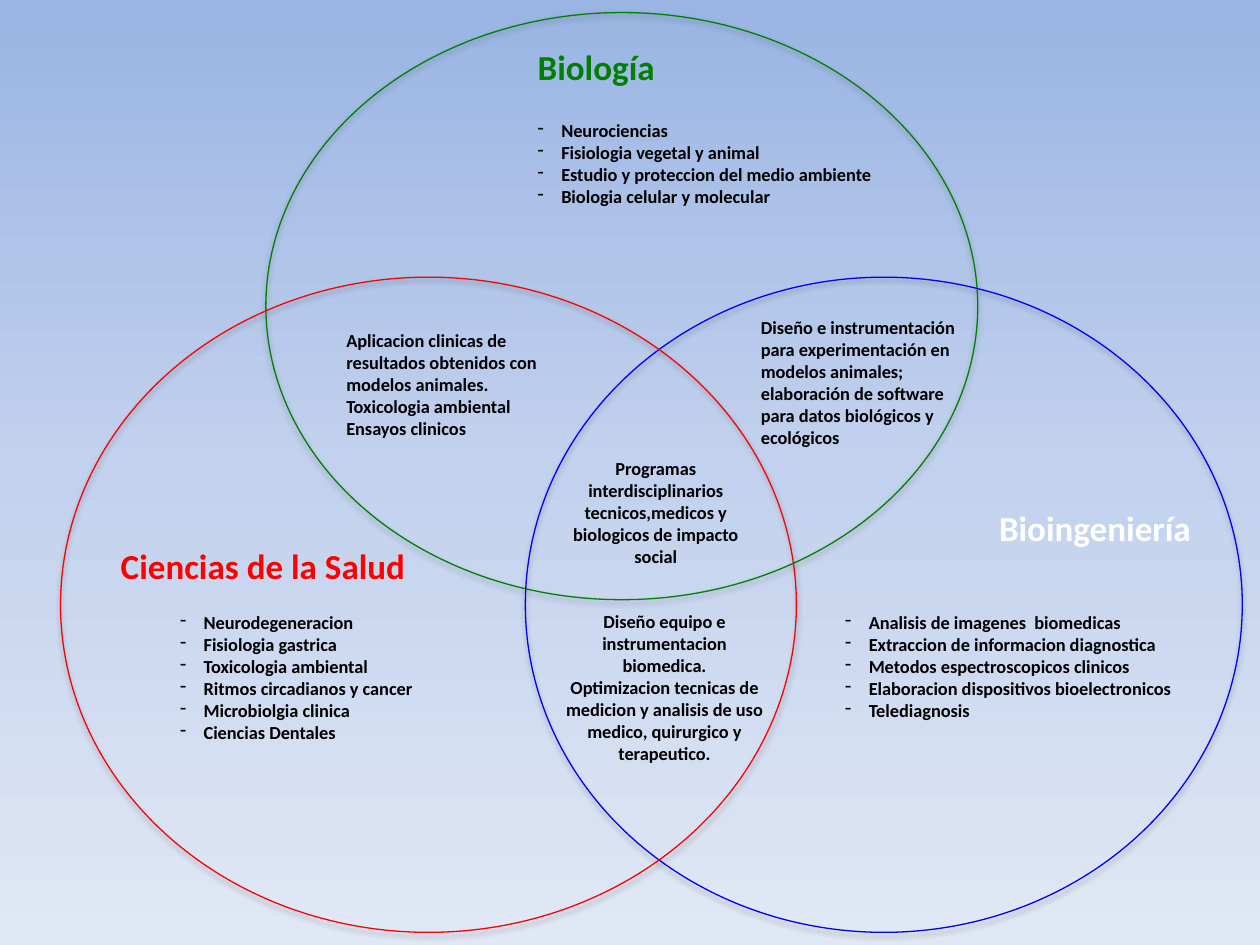
from copy import deepcopy

from lxml.etree import SubElement
from pptx import Presentation
from pptx.dml.color import RGBColor
from pptx.enum.shapes import MSO_SHAPE
from pptx.enum.text import MSO_AUTO_SIZE, PP_ALIGN
from pptx.oxml.ns import qn
from pptx.util import Pt

GREEN = RGBColor(0x00, 0x80, 0x00)
BLUE = RGBColor(0x00, 0x00, 0xFF)
RED = RGBColor(0xFF, 0x00, 0x00)
WHITE = RGBColor(0xFF, 0xFF, 0xFF)
BLACK = RGBColor(0x00, 0x00, 0x00)
SKY = [RGBColor(0x9A, 0xB5, 0xE4), RGBColor(0xC2, 0xD1, 0xED), RGBColor(0xE1, 0xE8, 0xF5)]

BODY_FONT = {"name": "Calibri", "size": Pt(10.5), "bold": True}
TITLE_FONT = {**BODY_FONT, "size": Pt(20)}
BULLET_INDENT = Pt(13.5)

CIRCLES = [
    ((151.9, 7.2, 406.8, 335.5), GREEN),
    ((300.2, 158.4, 409.7, 374.4), BLUE),
    ((34.6, 158.4, 420.5, 374.4), RED),
]

TITLES = [
    ((300.2, 22.3, 82.1, 31.7), "Biología", GREEN),
    ((563.8, 285.8, 125.3, 31.7), "Bioingeniería", WHITE),
    ((61.9, 307.4, 178.6, 31.7), "Ciencias de la Salud", RED),
]

OVERLAPS = [
    ((427.7, 177.1, 130.3, 83.5), PP_ALIGN.LEFT, [
        "Diseño e instrumentación para experimentación en modelos animales; "
        "elaboración de software para datos biológicos y ecológicos",
    ]),
    ((190.8, 184.3, 130.3, 70.6), PP_ALIGN.LEFT, [
        "Aplicacion clinicas de resultados obtenidos con modelos animales.",
        "Toxicologia ambiental",
        "Ensayos clinicos",
    ]),
    ((314.6, 344.9, 130.3, 96.5), PP_ALIGN.CENTER, [
        "Diseño equipo e instrumentacion biomedica.",
        "Optimizacion tecnicas de medicion y analisis de uso medico, "
        "quirurgico y terapeutico.",
    ]),
    ((309.6, 257.8, 130.3, 70.6), PP_ALIGN.CENTER, [
        "Programas interdisciplinarios tecnicos,medicos y biologicos de impacto social",
    ]),
]

TOPICS = [
    ((300.2, 64.8, 225.4, 83.5), [
        "Neurociencias",
        "Fisiologia vegetal y animal",
        "Estudio y proteccion del medio ambiente",
        "Biologia celular y molecular",
    ]),
    ((95.8, 345.6, 225.4, 108.7), [
        "Neurodegeneracion",
        "Fisiologia gastrica",
        "Toxicologia ambiental",
        "Ritmos circadianos y cancer",
        "Microbiolgia clinica",
        "Ciencias Dentales",
    ]),
    ((475.9, 345.6, 225.4, 70.6), [
        "Analisis de imagenes  biomedicas",
        "Extraccion de informacion diagnostica",
        "Metodos espectroscopicos clinicos",
        "Elaboracion dispositivos bioelectronicos",
        "Telediagnosis",
    ]),
]


def set_background(page):
    fill = page.background.fill
    fill.gradient()
    fill.gradient_angle = 270
    first = page.element.find(".//" + qn("a:gs"))
    first.addnext(deepcopy(first))
    for stop, color, position in zip(fill.gradient_stops, SKY, (0, 0.5, 1)):
        stop.color.rgb = color
        stop.position = position


def add_shadow(shape):
    shape.shadow.inherit = False
    effects = shape.element.spPr.find(qn("a:effectLst"))
    shadow = SubElement(effects, qn("a:outerShdw"), blurRad=str(Pt(3.1)),
                        dist=str(Pt(1.8)), dir="5400000", rotWithShape="0")
    color = SubElement(shadow, qn("a:srgbClr"), val=str(BLACK))
    SubElement(color, qn("a:alpha"), val="35000")


def add_circle(group, place, color):
    circle = group.shapes.add_shape(MSO_SHAPE.OVAL, *map(Pt, place))
    circle.fill.background()
    circle.line.color.rgb = color
    circle.line.width = Pt(0.75)
    add_shadow(circle)


def add_bullet(para):
    properties = para._p.get_or_add_pPr()
    properties.set("marL", str(BULLET_INDENT))
    properties.set("indent", str(-BULLET_INDENT))
    SubElement(properties, qn("a:buFontTx"))
    SubElement(properties, qn("a:buChar"), char="-")


def add_text(group, place, lines, font=BODY_FONT, color=BLACK,
             align=PP_ALIGN.LEFT, wrap=True, bullets=False):
    box = group.shapes.add_textbox(*map(Pt, place))
    frame = box.text_frame
    frame.word_wrap = wrap
    frame.auto_size = MSO_AUTO_SIZE.SHAPE_TO_FIT_TEXT
    for index, line in enumerate(lines):
        para = frame.add_paragraph() if index else frame.paragraphs[0]
        para.alignment = align
        if bullets:
            add_bullet(para)
        span = para.add_run()
        span.text = line
        for name, value in font.items():
            setattr(span.font, name, value)
        span.font.color.rgb = color


def main():
    deck = Presentation()
    deck.slide_width, deck.slide_height = Pt(720), Pt(540)
    page = deck.slides.add_slide(deck.slide_layouts[6])
    set_background(page)
    diagram = page.shapes.add_group_shape()
    for place, color in CIRCLES:
        add_circle(diagram, place, color)
    for place, title, color in TITLES:
        add_text(diagram, place, [title], TITLE_FONT, color, wrap=False)
    for place, align, lines in OVERLAPS:
        add_text(diagram, place, lines, align=align)
    for place, lines in TOPICS:
        add_text(diagram, place, lines, bullets=True)
    deck.save("out.pptx")


if __name__ == "__main__":
    main()
